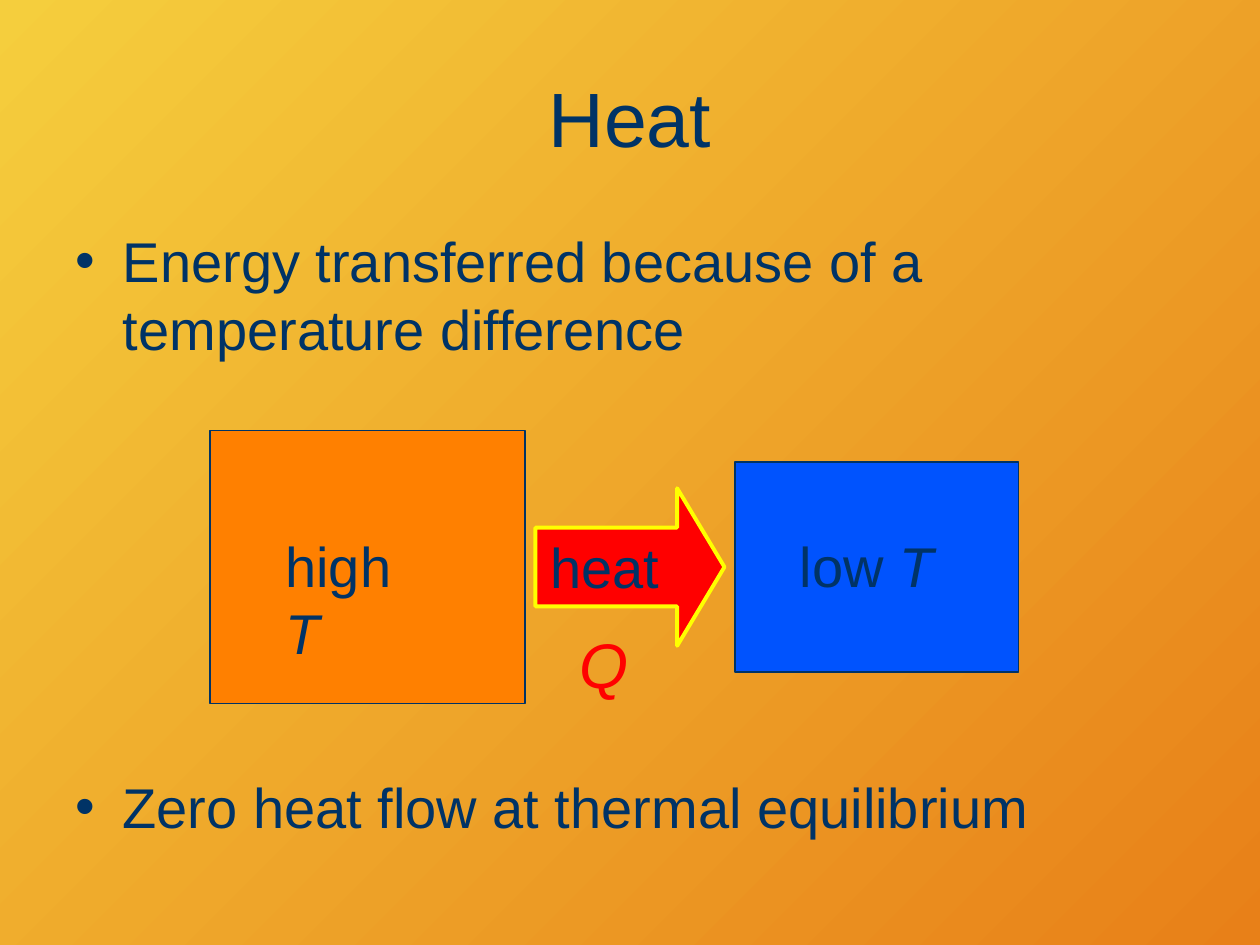
from lxml import etree
from pptx import Presentation
from pptx import util as u
from pptx.dml.color import RGBColor
from pptx.enum import shapes, text
from pptx.oxml import ns

PX = 9525  # EMU in one px, 96 px to the inch

NAVY = RGBColor(0x00, 0x33, 0x66)
ORANGE = RGBColor(0xFF, 0x80, 0x00)
BLUE = RGBColor(0x00, 0x53, 0xFE)
RED = RGBColor(0xFF, 0x00, 0x00)
YELLOW = RGBColor(0xFF, 0xFF, 0x00)
GOLD = RGBColor(0xF5, 0xCE, 0x3D)
AMBER = RGBColor(0xE8, 0x80, 0x18)


def px(*lengths):
    return [u.Emu(length * PX) for length in lengths]


def write(paragraph, content, size=32, color=NAVY, italic=False):
    run = paragraph.add_run()
    run.text = content
    run.font.name = "Arial"
    run.font.size = u.Pt(size)
    run.font.color.rgb = color
    run.font.italic = italic


def place(shape, *box):
    shape.left, shape.top, shape.width, shape.height = px(*box)


def paint_background(slide):
    fill = slide.background.fill
    fill.gradient()
    fill.gradient_angle = 315
    for stop, color in zip(fill.gradient_stops, (GOLD, AMBER)):
        stop.color.rgb = color


def fill_title(shape, content):
    place(shape, 48, 29, 864, 120)
    frame = shape.text_frame
    frame.vertical_anchor = text.MSO_ANCHOR.MIDDLE
    frame.paragraphs[0].alignment = text.PP_ALIGN.CENTER
    write(frame.paragraphs[0], content, size=44)


def fill_bullet(shape, content):
    """Write one bulleted paragraph with a hanging indent."""
    frame = shape.text_frame
    frame.word_wrap = True
    frame.auto_size = text.MSO_AUTO_SIZE.NONE
    paragraph = frame.paragraphs[0]
    properties = paragraph._p.get_or_add_pPr()
    properties.set("marL", str(36 * PX))
    properties.set("indent", str(-36 * PX))
    spacing = etree.SubElement(properties, ns.qn("a:spcBef"))
    etree.SubElement(spacing, ns.qn("a:spcPct"), val="20000")
    etree.SubElement(properties, ns.qn("a:buFont"), typeface="Arial")
    etree.SubElement(properties, ns.qn("a:buChar"), char="•")
    write(paragraph, content)


def add_block(parent, kind, box, fill, line=NAVY, line_width=0.75):
    shape = parent.add_shape(kind, *px(*box))
    shape.shadow.inherit = False
    shape.fill.solid()
    shape.fill.fore_color.rgb = fill
    shape.line.color.rgb = line
    shape.line.width = u.Pt(line_width)
    return shape


def add_label(parent, box, content="", symbol="", **style):
    """Add an unwrapped label: upright words, then an italic symbol."""
    frame = parent.add_textbox(*px(*box)).text_frame
    frame.word_wrap = False
    frame.auto_size = text.MSO_AUTO_SIZE.SHAPE_TO_FIT_TEXT
    if content:
        write(frame.paragraphs[0], content, **style)
    if symbol:
        write(frame.paragraphs[0], symbol, italic=True, **style)


def add_body(slide, box, fill, label_box, content):
    """Add a body at some temperature T, grouped with its label."""
    group = slide.shapes.add_group_shape().shapes
    add_block(group, shapes.MSO_SHAPE.RECTANGLE, box, fill)
    add_label(group, label_box, content, "T")


def add_heat_arrow(slide):
    group = slide.shapes.add_group_shape().shapes
    arrow = add_block(group, shapes.MSO_SHAPE.RIGHT_ARROW, (408, 372, 144, 120),
                      RED, line=YELLOW, line_width=2.25)
    arrow.adjustments[0] = 0.5
    arrow.adjustments[1] = 0.3
    add_label(group, (410, 401, 102, 60), "heat")


def main():
    presentation = Presentation()
    presentation.slide_width, presentation.slide_height = px(960, 720)
    slide = presentation.slides.add_slide(presentation.slide_layouts[1])
    paint_background(slide)

    fill_title(slide.shapes.title, "Heat")
    definition = slide.placeholders[1]
    place(definition, 48, 168, 864, 128)
    fill_bullet(definition, "Energy transferred because of a temperature difference")

    add_body(slide, (160, 328, 240, 208), ORANGE, (208, 400, 137, 60), "high ")
    add_body(slide, (560, 352, 216, 160), BLUE, (600, 400, 121, 60), "low ")
    add_heat_arrow(slide)

    equilibrium = slide.shapes.add_textbox(*px(48, 584, 864, 80))
    fill_bullet(equilibrium, "Zero heat flow at thermal equilibrium")
    add_label(slide.shapes, (432, 472, 69, 68), symbol="Q", size=36, color=RED)

    presentation.save("out.pptx")


if __name__ == "__main__":
    main()
